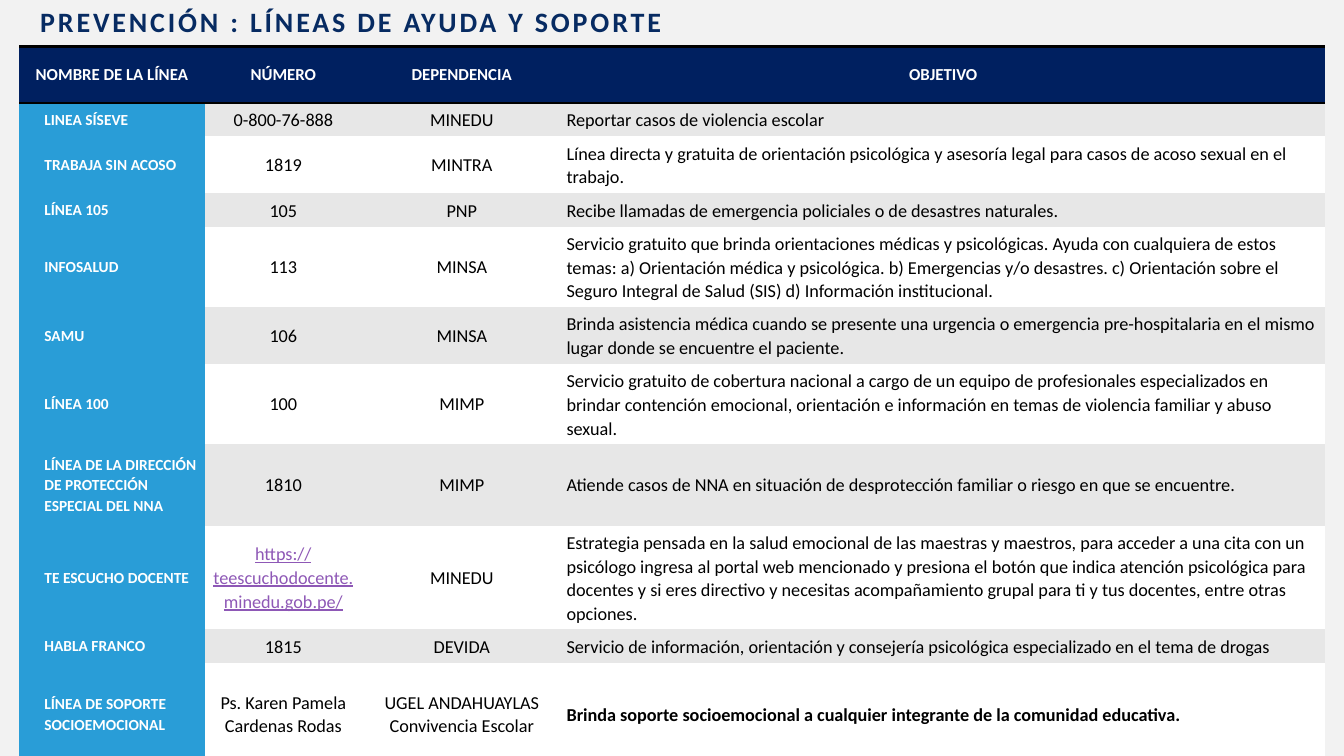
from lxml import etree
from pptx import Presentation
from pptx import util as u
from pptx.dml.color import RGBColor
from pptx.enum import text
from pptx.oxml import ns

TITLE = "PREVENCIÓN : LÍNEAS DE AYUDA Y SOPORTE"
HEADINGS = ("NOMBRE DE LA LÍNEA", "NÚMERO", "DEPENDENCIA", "OBJETIVO")
HELPLINES = [
    ("LINEA SÍSEVE", "0-800-76-888", "MINEDU", "Reportar casos de violencia escolar"),
    ("TRABAJA SIN ACOSO", "1819", "MINTRA",
     "Línea directa y gratuita de orientación psicológica y asesoría legal para casos "
     "de acoso sexual en el trabajo."),
    ("LÍNEA 105", "105", "PNP",
     "Recibe llamadas de emergencia policiales o de desastres naturales."),
    ("INFOSALUD", "113", "MINSA",
     "Servicio gratuito que brinda orientaciones médicas y psicológicas. Ayuda con "
     "cualquiera de estos temas: a) Orientación médica y psicológica. b) Emergencias "
     "y/o desastres. c) Orientación sobre el Seguro Integral de Salud (SIS) "
     "d) Información institucional."),
    ("SAMU", "106", "MINSA",
     "Brinda asistencia médica cuando se presente una urgencia o emergencia "
     "pre-hospitalaria en el mismo lugar donde se encuentre el paciente."),
    ("LÍNEA 100", "100", "MIMP",
     "Servicio gratuito de cobertura nacional a cargo de un equipo de profesionales "
     "especializados en brindar contención emocional, orientación e información en "
     "temas de violencia familiar y abuso sexual."),
    ("LÍNEA DE LA DIRECCIÓN DE PROTECCIÓN ESPECIAL DEL NNA", "1810", "MIMP",
     "Atiende casos de NNA en situación de desprotección familiar o riesgo en que se "
     "encuentre."),
    ("TE ESCUCHO DOCENTE", "https://teescuchodocente.minedu.gob.pe/", "MINEDU",
     "Estrategia pensada en la salud emocional de las maestras y maestros, para acceder "
     "a una cita con un psicólogo ingresa al portal web mencionado y presiona el botón "
     "que indica atención psicológica para docentes y si eres directivo y necesitas "
     "acompañamiento grupal para ti y tus docentes, entre otras opciones."),
    ("HABLA FRANCO", "1815", "DEVIDA",
     "Servicio de información, orientación y consejería psicológica especializado en "
     "el tema de drogas"),
    ("LÍNEA DE SOPORTE SOCIOEMOCIONAL", "Ps. Karen Pamela Cardenas Rodas",
     "UGEL ANDAHUAYLAS\nConvivencia Escolar",
     "Brinda soporte socioemocional a cualquier integrante de la comunidad educativa."),
]
COLUMN_WIDTHS = (1.84, 1.56, 1.98, 7.57)
ROW_HEIGHTS = (0.56, 0.31, 0.53, 0.31, 0.75, 0.53, 0.75, 0.81, 0.97, 0.31, 1.02)
LAST = len(HELPLINES)

FONT = "Calibri"
NO_GRID_STYLE = "{2D5ABB26-0587-4C30-8999-92F81FD0307C}"
BACKGROUND = RGBColor(0xF2, 0xF2, 0xF2)
TITLE_BLUE = RGBColor(0x07, 0x2B, 0x62)
NAVY = RGBColor(0x00, 0x20, 0x60)
SKY = RGBColor(0x29, 0x9D, 0xD7)
BAND = RGBColor(0xE7, 0xE7, 0xE7)
WHITE = RGBColor(0xFF, 0xFF, 0xFF)
BLACK = RGBColor(0x00, 0x00, 0x00)
LINK = RGBColor(0x8E, 0x58, 0xB6)


def style_font(font, size, color, bold):
    font.name, font.size, font.bold = FONT, u.Pt(size), bold
    font.color.rgb = color


def add_rule(cell, edge):
    """Draw a black 2 pt border; edge is "lnT" or "lnB"."""
    line = etree.SubElement(cell._tc.get_or_add_tcPr(), ns.qn("a:" + edge), w=str(u.Pt(2)))
    fill = etree.SubElement(line, ns.qn("a:solidFill"))
    etree.SubElement(fill, ns.qn("a:srgbClr"), val=str(BLACK))


def cell_look(row, column, words):
    """Return fill, text colour, size and boldness for a place in the table."""
    if row == 0:
        return NAVY, WHITE, 12, True
    if column == 0:
        return SKY, WHITE, 11, True
    fill = BAND if row % 2 else WHITE
    color = LINK if words.startswith("https") else BLACK
    return fill, color, 13, (row, column) == (LAST, 3)


def fill_cell(cell, row, column, words):
    fill, color, size, bold = cell_look(row, column, words)
    for edge in ("lnT", "lnB") if row == 0 else ("lnB",) if row == LAST else ():
        add_rule(cell, edge)
    cell.fill.solid()
    cell.fill.fore_color.rgb = fill
    cell.vertical_anchor = text.MSO_ANCHOR.MIDDLE
    cell.margin_left = cell.margin_right = u.Inches(0.05)
    cell.margin_top = cell.margin_bottom = u.Inches(0.05)
    cell.text_frame.text = words
    centred = row == 0 or column in (1, 2)
    for paragraph in cell.text_frame.paragraphs:
        paragraph.alignment = text.PP_ALIGN.CENTER if centred else text.PP_ALIGN.LEFT
        paragraph.line_spacing = 1.07
        if row and column == 0:
            paragraph._p.get_or_add_pPr().set("marL", str(u.Inches(0.2)))
        for run in paragraph.runs:
            style_font(run.font, size, color, bold)
            if color == LINK:
                run.font.underline = True


def add_title(slide):
    frame = slide.shapes.add_textbox(
        u.Inches(0.3), 0, u.Inches(7.62), u.Inches(0.46)).text_frame
    frame.word_wrap = True
    frame.vertical_anchor = text.MSO_ANCHOR.MIDDLE
    frame.text = TITLE
    heading = frame.paragraphs[0]
    heading.line_spacing = 0.9
    style_font(heading.runs[0].font, 20, TITLE_BLUE, True)
    heading.runs[0]._r.get_or_add_rPr().set("spc", "200")


def add_helplines(slide):
    table = slide.shapes.add_table(
        len(ROW_HEIGHTS), len(COLUMN_WIDTHS), u.Inches(0.19), u.Inches(0.46),
        u.Inches(sum(COLUMN_WIDTHS)), u.Inches(sum(ROW_HEIGHTS))).table
    table.horz_banding = False
    table._tbl.tblPr.find(ns.qn("a:tableStyleId")).text = NO_GRID_STYLE
    for column, width in zip(table.columns, COLUMN_WIDTHS):
        column.width = u.Inches(width)
    for row, height in zip(table.rows, ROW_HEIGHTS):
        row.height = u.Inches(height)
    for row, entries in enumerate([HEADINGS, *HELPLINES]):
        for column, words in enumerate(entries):
            fill_cell(table.cell(row, column), row, column, words)


def main():
    deck = Presentation()
    deck.slide_width, deck.slide_height = u.Inches(13.33), u.Inches(7.5)
    slide = deck.slides.add_slide(deck.slide_layouts[6])
    slide.background.fill.solid()
    slide.background.fill.fore_color.rgb = BACKGROUND
    add_title(slide)
    add_helplines(slide)
    deck.save("out.pptx")


if __name__ == "__main__":
    main()
